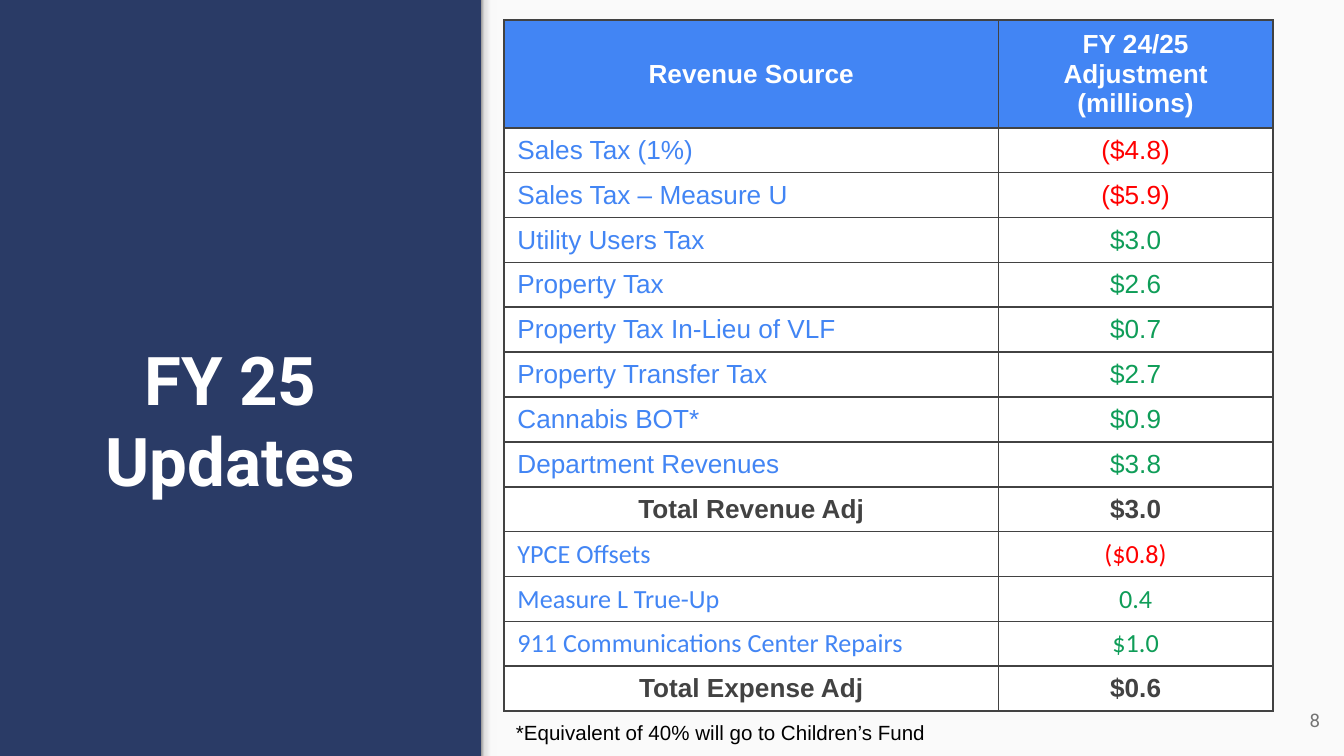
from lxml import etree
from pptx import Presentation
from pptx.dml.color import RGBColor
from pptx.enum.shapes import MSO_SHAPE as Shape
from pptx.enum.text import MSO_ANCHOR as Anchor, PP_ALIGN as Align
from pptx.oxml import parse_xml
from pptx.oxml.ns import nsdecls, qn
from pptx.util import Inches, Pt

WIDTH = 10
HEIGHT = WIDTH * 9 / 16
PANEL_LEFT = 3.58
COLORS = {
    "navy": "2A3B66", "panel": "FAFAFA", "white": "FFFFFF", "black": "000000",
    "header": "4285F4", "label": "4285F4", "loss": "FF0000", "gain": "0F9D58",
    "total": "424242", "border": "424242", "number": "737373",
    "edge": "999999", "fade": "DEDEDE", "clear": "F9F9F9",
}
SHADOW_STOPS = [(0, "edge"), (20, "fade"), (64, "clear"), (100, "clear")]

# Label, adjustment, font
ADJUSTMENTS = [
    ("Sales Tax (1%)", "($4.8)", "Arial"),
    ("Sales Tax – Measure U", "($5.9)", "Arial"),
    ("Utility Users Tax", "$3.0", "Arial"),
    ("Property Tax", "$2.6", "Arial"),
    ("Property Tax In-Lieu of VLF", "$0.7", "Arial"),
    ("Property Transfer Tax", "$2.7", "Arial"),
    ("Cannabis BOT*", "$0.9", "Arial"),
    ("Department Revenues", "$3.8", "Arial"),
    ("Total Revenue Adj", "$3.0", "Arial"),
    ("YPCE Offsets", "($0.8)", "Calibri"),
    ("Measure L True-Up", "0.4", "Calibri"),
    ("911 Communications Center Repairs", "$1.0", "Calibri"),
    ("Total Expense Adj", "$0.6", "Arial"),
]


def rgb(name):
    return RGBColor.from_string(COLORS[name])


class SlideBuilder:
    """Holds the deck style and the current slide."""

    def __init__(self, deck):
        self.slide = deck.slides.add_slide(deck.slide_layouts[6])

    def background(self, color):
        fill = self.slide.background.fill
        fill.solid()
        fill.fore_color.rgb = rgb(color)

    def rectangle(self, left, top, width, height, color):
        box = self.slide.shapes.add_shape(
            Shape.RECTANGLE, Inches(left), Inches(top), Inches(width), Inches(height))
        box.shadow.inherit = False
        box.line.fill.background()
        box.fill.solid()
        box.fill.fore_color.rgb = rgb(color)
        return box

    def edge_shadow(self, left, top, width, height, stops):
        strip = self.rectangle(left, top, width, height, "panel")
        strip.fill.gradient()
        strip.fill.gradient_angle = 0
        stop_list = strip._element.spPr.find(".//" + qn("a:gsLst"))
        for old_stop in list(stop_list):
            stop_list.remove(old_stop)
        for percent, color in stops:
            stop = etree.SubElement(stop_list, qn("a:gs"), pos=str(percent * 1000))
            etree.SubElement(stop, qn("a:srgbClr"), val=COLORS[color])

    def style(self, paragraph, size, color, font="Arial", bold=False, align=Align.LEFT):
        paragraph.alignment = align
        paragraph.font.size = Pt(size)
        paragraph.font.name = font
        paragraph.font.bold = bold
        paragraph.font.color.rgb = rgb(color)

    def text(self, left, top, width, height, words, size, color,
             anchor=Anchor.TOP, inset=0.05, **look):
        frame = self.slide.shapes.add_textbox(
            Inches(left), Inches(top), Inches(width), Inches(height)).text_frame
        frame.word_wrap = True
        frame.vertical_anchor = anchor
        frame.margin_top = frame.margin_bottom = Inches(inset)
        frame.text = words
        self.style(frame.paragraphs[0], size, color, **look)

    def table(self, left, top, height, widths, row_heights):
        frame = self.slide.shapes.add_table(
            len(row_heights), len(widths), Inches(left), Inches(top),
            Inches(sum(widths)), Inches(height))
        grid = frame.table
        grid.horz_banding = False
        for column, width in zip(grid.columns, widths):
            column.width = Inches(width)
        for row, row_height in zip(grid.rows, row_heights):
            row.height = Inches(row_height)
        frame.height = Inches(height)
        return grid

    def cell(self, cell, words, color, fill="white", **look):
        cell.text = words
        cell.vertical_anchor = Anchor.MIDDLE
        cell.fill.solid()
        cell.fill.fore_color.rgb = rgb(fill)
        self.style(cell.text_frame.paragraphs[0], 14, color, **look)
        properties = cell._tc.get_or_add_tcPr()
        for index, side in enumerate(("lnL", "lnR", "lnT", "lnB")):
            properties.insert(index, parse_xml(
                f'<a:{side} {nsdecls("a")} w="{Pt(1)}"><a:solidFill>'
                f'<a:srgbClr val="{COLORS["border"]}"/></a:solidFill></a:{side}>'))


def main():
    deck = Presentation()
    deck.slide_width, deck.slide_height = Inches(WIDTH), Inches(HEIGHT)
    page = SlideBuilder(deck)

    # Navy side with the title, light panel with a soft edge
    page.background("navy")
    page.rectangle(PANEL_LEFT, 0, WIDTH - PANEL_LEFT, HEIGHT, "panel")
    page.edge_shadow(PANEL_LEFT, 0, 0.12, HEIGHT, SHADOW_STOPS)
    page.text(0.18, 1.8, 3.07, 2.02, "FY 25 Updates", 36, "white", Anchor.BOTTOM,
              inset=0.1, font="Roboto", bold=True, align=Align.CENTER)
    page.text(9.32, 5.14, 0.6, 0.43, "8", 10, "number", Anchor.MIDDLE,
              inset=0.1, font="Roboto", align=Align.RIGHT)

    # Adjustment table; rows grow to fit their text
    row_heights = [0.21] + [0] * len(ADJUSTMENTS)
    revenue = page.table(3.75, 0.15, 5.13, [3.68, 2.04], row_heights)
    for column, heading in enumerate(("Revenue Source", "FY 24/25 Adjustment (millions)")):
        page.cell(revenue.cell(0, column), heading, "white", fill="header",
                  bold=True, align=Align.CENTER)
    for row, (label, amount, font) in enumerate(ADJUSTMENTS, start=1):
        is_total = label.startswith("Total")
        sign = "loss" if amount.startswith("(") else "gain"
        page.cell(revenue.cell(row, 0), label, "total" if is_total else "label",
                  font=font, bold=is_total,
                  align=Align.CENTER if is_total else Align.LEFT)
        page.cell(revenue.cell(row, 1), amount, "total" if is_total else sign,
                  font=font, bold=is_total, align=Align.CENTER)

    # Footnote
    page.text(3.74, 5.31, 5.72, 0.29, "*Equivalent of 40% will go to Children’s Fund",
              11, "black")
    deck.save("out.pptx")


if __name__ == "__main__":
    main()
